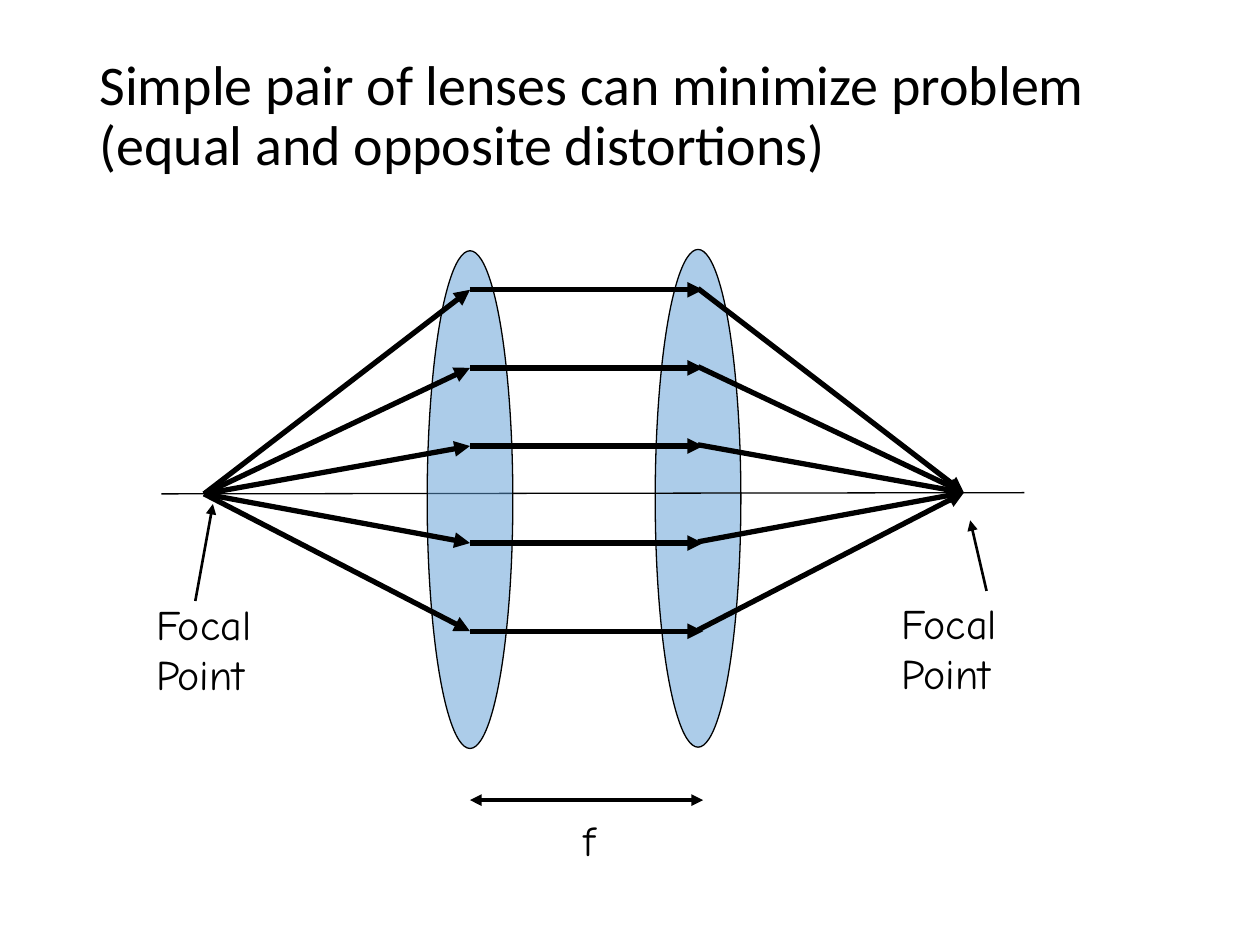
from lxml import etree
from pptx import Presentation
from pptx.dml.color import RGBColor
from pptx.enum.shapes import MSO_CONNECTOR as CONNECTOR, MSO_SHAPE as SHAPE
from pptx.enum.text import MSO_ANCHOR as ANCHOR, PP_ALIGN as ALIGN
from pptx.oxml.ns import qn
from pptx.util import Inches, Pt

BLACK = RGBColor(0, 0, 0)
LENS_BLUE = RGBColor(0x5B, 0x9B, 0xD5)

prs = Presentation()
prs.slide_width, prs.slide_height = Inches(10), Inches(7.5)
slide = prs.slides.add_slide(prs.slide_layouts[6])


def add_line(start, end, width, arrows=("tailEnd",)):
    """Draw a black line; tailEnd puts an arrowhead at its end, headEnd at its start."""
    line = slide.shapes.add_connector(
        CONNECTOR.STRAIGHT, *(Inches(value) for value in (*start, *end)))
    line.line.color.rgb = BLACK
    line.line.width = Pt(width)
    for arrow in arrows:
        etree.SubElement(line.line._get_or_add_ln(), qn("a:" + arrow), type="triangle")
    etree.SubElement(line._element.spPr, qn("a:effectLst"))


def add_text(box, lines, font, size, wrap=False):
    """Add a text box with one paragraph per line and return its frame."""
    frame = slide.shapes.add_textbox(*(Inches(value) for value in box)).text_frame
    frame.word_wrap = wrap
    for index, words in enumerate(lines):
        paragraph = frame.paragraphs[0] if index == 0 else frame.add_paragraph()
        run = paragraph.add_run()
        run.text = words
        run.font.name, run.font.size = font, Pt(size)
        run.font.color.rgb = BLACK
    return frame


# Title
title = add_text((0.69, 0.4, 8.62, 1.45),
                 ["Simple pair of lenses can minimize problem",
                  "(equal and opposite distortions)"], "Calibri", 32, wrap=True)
for paragraph in title.paragraphs:
    paragraph.line_spacing = 0.9

# Right lens, optical axis, left lens
left_focus, right_focus = (1.62, 3.92), (7.65, 3.91)
for lens_left, lens_top in ((5.2, 1.98), (3.39, 1.99)):
    lens = slide.shapes.add_shape(SHAPE.OVAL, Inches(lens_left), Inches(lens_top),
                                  Inches(0.68), Inches(3.95))
    lens.shadow.inherit = False
    lens.fill.solid()
    lens.fill.fore_color.rgb = LENS_BLUE
    color = lens._element.spPr.find(qn("a:solidFill"))[0]
    etree.SubElement(color, qn("a:alpha"), val="50000")
    lens.line.color.rgb = BLACK
    lens.line.width = Pt(0.75)
    if lens_left > 5:
        add_line((1.28, 3.92), (8.13, 3.91), 0.75, arrows=())

# Rays: out of the left focus, parallel between the lenses, into the right focus
left_lens_x, right_lens_x, parallel_end = 3.73, 5.54, 5.58
for ray_y in (2.3, 2.92, 3.54, 4.31, 5.01):
    add_line(left_focus, (left_lens_x, ray_y), 3)
    add_line((left_lens_x, ray_y), (parallel_end, ray_y), 3)
    add_line((right_lens_x, ray_y - 0.01), right_focus, 3)

# Focal point labels and their pointers
for label_left, label_top, start, end in (
        (1.14, 4.7, (1.55, 4.77), (1.69, 4)),
        (7.06, 4.69, (7.83, 4.69), (7.7, 4.13))):
    add_text((label_left, label_top, 1.07, 1.03), ["Focal", "Point"], "Comic Neue", 24)
    add_line(start, end, 1.5)

# Focal length
add_line((left_lens_x, 6.35), (parallel_end, 6.35), 2.25, arrows=("headEnd", "tailEnd"))
focal_length = add_text((4.49, 6.38, 0.37, 0.57), ["f"], "Comic Neue", 24)
focal_length.vertical_anchor = ANCHOR.MIDDLE
focal_length.paragraphs[0].alignment = ALIGN.CENTER

prs.save("out.pptx")
